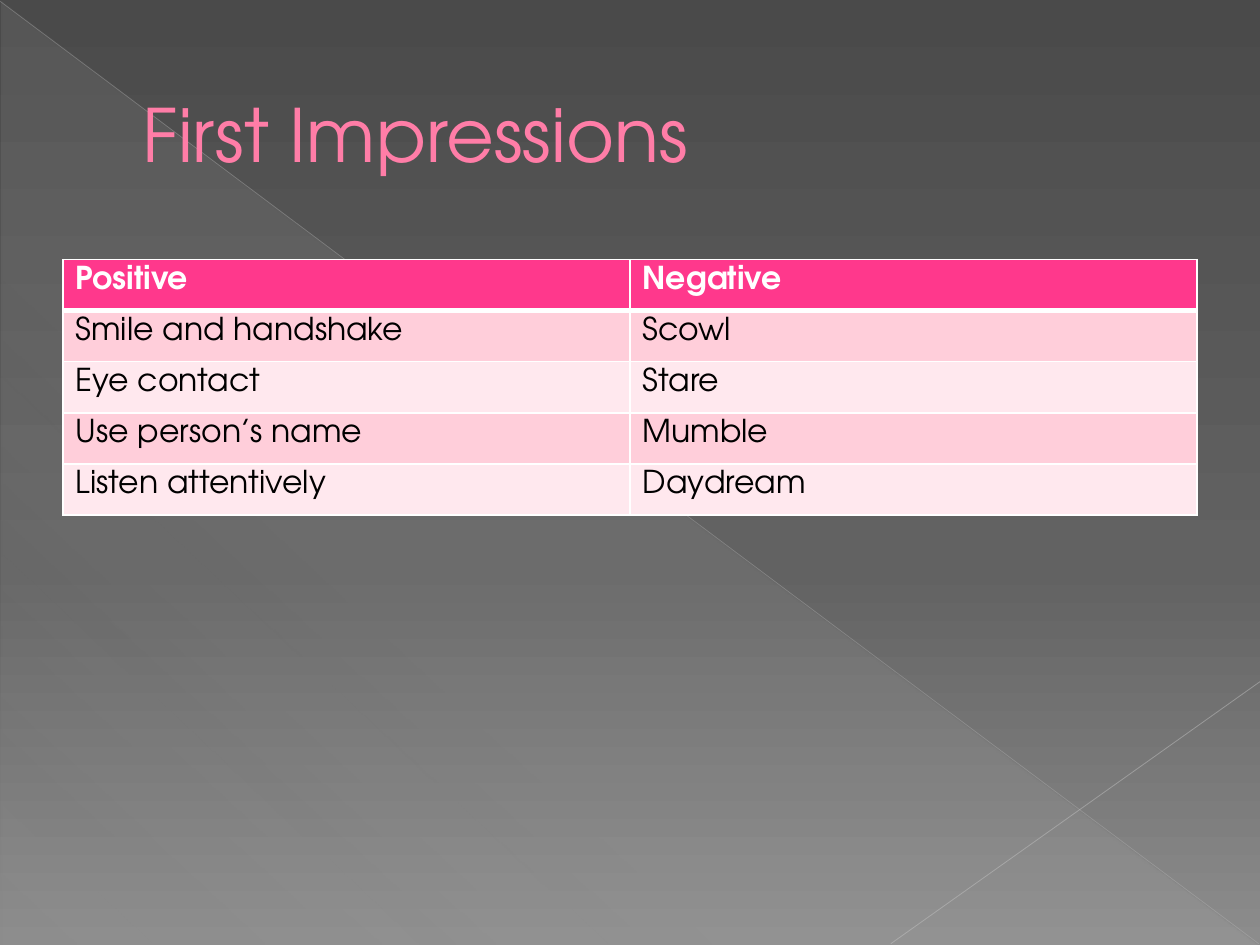
from lxml.etree import SubElement as Sub
from pptx import Presentation
from pptx.dml.color import RGBColor as RGB
from pptx.enum.shapes import MSO_CONNECTOR, MSO_SHAPE
from pptx.enum.text import MSO_ANCHOR, PP_ALIGN
from pptx.oxml.ns import qn
from pptx.util import Pt

TITLE = "First Impressions"
ROWS = [
    ("Positive", "Negative"),
    ("Smile and handshake", "Scowl"),
    ("Eye contact", "Stare"),
    ("Use person’s name", "Mumble"),
    ("Listen attentively", "Daydream"),
]

THEME = {
    "font": "TeX Gyre Adventor",
    "title_size": 42, "cell_size": 18,
    "title": "FF7DA7", "title_edge": "B12761",
    "header": "FF388C", "header_text": "FFFFFF",
    "bands": ("FFCEDA", "FFE8EE"), "cell_text": "000000",
    "border": "FFFFFF",
    # position %, colour, opacity %
    "background": [(0, "4A4A4A", 100), (60, "626262", 100), (100, "8C8C8C", 100)],
    "wedge": [(0, "D2D2D2", 10), (70, "D2D2D2", 8), (100, "D2D2D2", 1)],
}

WIDTH, HEIGHT = 720, 540
MARGIN = 36
TITLE_BOX = (MARGIN, 20.88, WIDTH - 2 * MARGIN, 110.16)
TITLE_INDENT = 38.16
TABLE_TOP, ROW_HEIGHT = 148.32, 29.2
WEDGE_BOX = (0.72, 1.2, 718.56, 538.56)
# start, end, colour, width, opacity %
DIAGONALS = [
    ((0, 0.72), (719.28, 539.28), "BFBFBF", 0.39, 35),
    ((720, 389.52), (509.04, 539.28), "C6C6C6", 0.47, 45),
]


def pts(values):
    return [Pt(v) for v in values]


def add_color(parent, color, opacity=100):
    clr = Sub(parent, qn("a:srgbClr"), val=color)
    if opacity < 100:
        Sub(clr, qn("a:alpha"), val=str(opacity * 1000))


def set_gradient(fill, element, stops, angle):
    """Fill with any number of stops; angle runs clockwise from the left."""
    fill.gradient()
    fill.gradient_angle = 360 - angle
    stop_list = next(element.iter(qn("a:gsLst")))
    for old in list(stop_list):
        stop_list.remove(old)
    for pos, color, opacity in stops:
        add_color(Sub(stop_list, qn("a:gs"), pos=str(pos * 1000)), color, opacity)


def set_font(font, **values):
    font.name = THEME["font"]
    font.color.rgb = RGB.from_string(values.pop("color"))
    for name, value in values.items():
        setattr(font, name, value)


def add_wedge(slide):
    sp = slide.shapes.add_shape(MSO_SHAPE.RIGHT_TRIANGLE, *pts(WEDGE_BOX))
    sp.shadow.inherit = False
    sp.line.fill.background()
    set_gradient(sp.fill, sp.element, THEME["wedge"], 133)


def add_diagonal(slide, start, end, color, width, opacity):
    line = slide.shapes.add_connector(MSO_CONNECTOR.STRAIGHT, *pts(start + end))
    line.line.width = Pt(width)
    line.line.color.rgb = RGB.from_string(color)
    clr = next(line.element.spPr.iter(qn("a:srgbClr")))
    Sub(clr, qn("a:alpha"), val=str(opacity * 1000))
    Sub(line.element.spPr, qn("a:effectLst"))


def fill_title(slide):
    sp = slide.shapes.title
    slide.shapes.element.append(sp.element)  # in front of the backdrop
    sp.left, sp.top, sp.width, sp.height = pts(TITLE_BOX)
    tf = sp.text_frame
    tf.text = TITLE
    tf.vertical_anchor = MSO_ANCHOR.MIDDLE
    p = tf.paragraphs[0]
    p.alignment = PP_ALIGN.LEFT
    props = p._p.get_or_add_pPr()
    props.set("marL", str(Pt(TITLE_INDENT)))
    props.set("indent", "0")
    r = p.runs[0]
    set_font(r.font, size=Pt(THEME["title_size"]), color=THEME["title"])
    r_props = r._r.get_or_add_rPr()
    edge = Sub(r_props, qn("a:ln"), w=str(Pt(0.5)))
    add_color(Sub(edge, qn("a:solidFill")), THEME["title_edge"])
    r_props.insert(0, edge)


def set_borders(cell, **widths):
    props = cell._tc.get_or_add_tcPr()
    for side in "LRTB":
        ln = Sub(props, qn(f"a:ln{side}"), w=str(Pt(widths.get(side, 1))))
        add_color(Sub(ln, qn("a:solidFill")), THEME["border"])


def add_table(slide):
    n_rows, n_cols = len(ROWS), len(ROWS[0])
    box = (MARGIN, TABLE_TOP, WIDTH - 2 * MARGIN, ROW_HEIGHT * n_rows)
    table = slide.shapes.add_table(n_rows, n_cols, *pts(box)).table
    for i, row in enumerate(ROWS):
        is_header = i == 0
        fill = THEME["header"] if is_header else THEME["bands"][(i - 1) % 2]
        color = THEME["header_text" if is_header else "cell_text"]
        for j, text in enumerate(row):
            cell = table.cell(i, j)
            cell.text = text
            set_font(cell.text_frame.paragraphs[0].runs[0].font,
                     size=Pt(THEME["cell_size"]), bold=is_header, color=color)
            set_borders(cell, T=3 if i == 1 else 1, B=3 if is_header else 1)
            cell.fill.solid()
            cell.fill.fore_color.rgb = RGB.from_string(fill)


def main():
    prs = Presentation()
    prs.slide_width, prs.slide_height = pts((WIDTH, HEIGHT))
    slide = prs.slides.add_slide(prs.slide_layouts.get_by_name("Title Only"))
    set_gradient(slide.background.fill, slide.element, THEME["background"], 90)
    add_wedge(slide)
    for diagonal in DIAGONALS:
        add_diagonal(slide, *diagonal)
    fill_title(slide)
    add_table(slide)
    prs.save("out.pptx")


if __name__ == "__main__":
    main()
